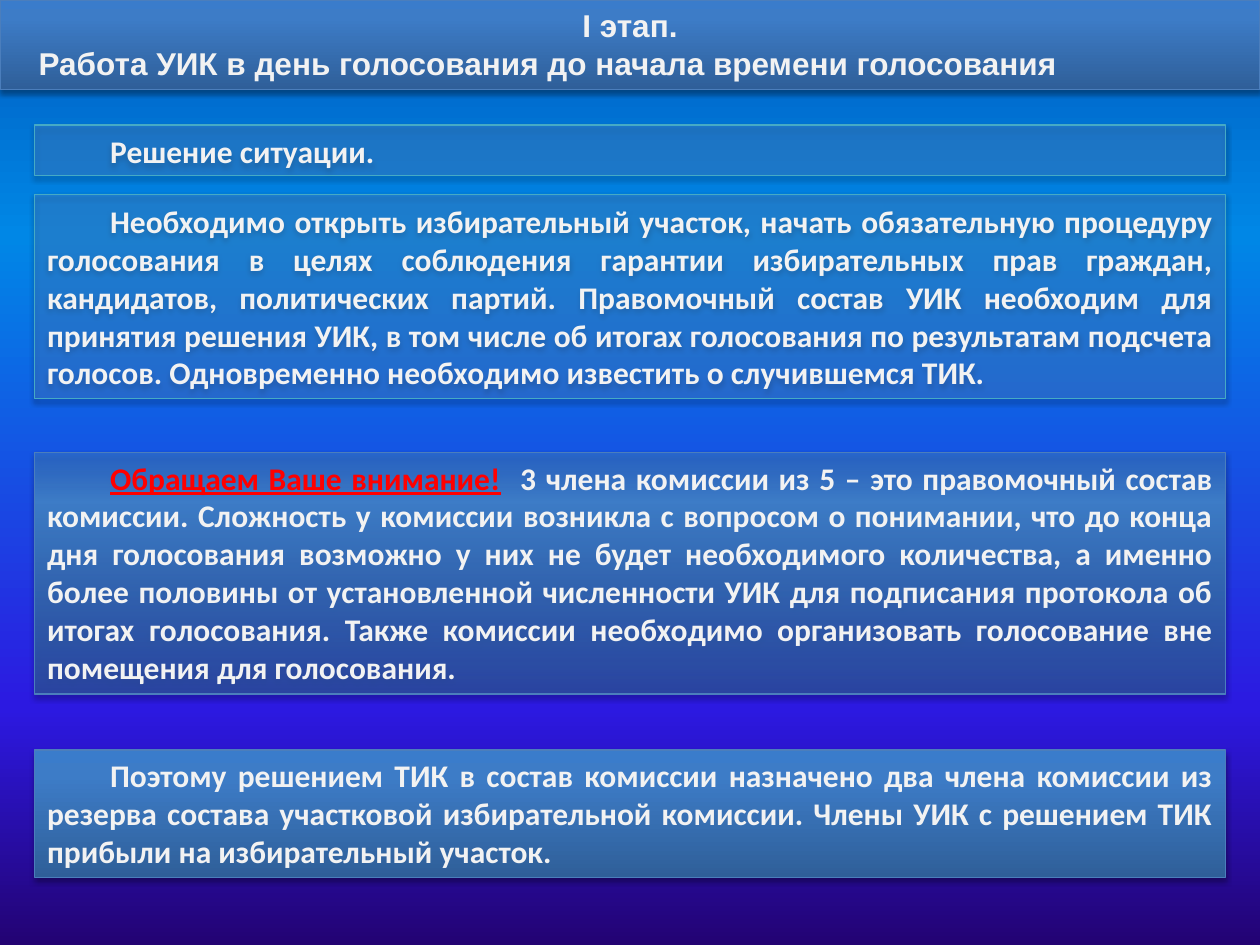
from lxml.etree import SubElement
from pptx import Presentation
from pptx.dml.color import RGBColor
from pptx.enum.shapes import MSO_SHAPE as Preset
from pptx.enum.text import MSO_ANCHOR as Anchor, MSO_AUTO_SIZE as AutoSize, PP_ALIGN as Align
from pptx.oxml.ns import qn
from pptx.util import Pt

WHITE = RGBColor(0xF2, 0xF2, 0xF2)
RED = RGBColor(0xFF, 0x00, 0x00)
STEEL = RGBColor(0x4B, 0x7E, 0xBC)
TEAL = RGBColor(0x46, 0xAA, 0xC5)
BLACK = RGBColor(0x00, 0x00, 0x00)
GLASS = RGBColor(0x55, 0x8E, 0xD5)
NAVY = RGBColor(0x2F, 0x5F, 0x99)
BLUE = RGBColor(0x3D, 0x7C, 0xC7)
SKY = RGBColor(0x3A, 0x7C, 0xCB)

BACKDROP = [(0, RGBColor(0x23, 0x03, 0x73), 100), (25, RGBColor(0x2C, 0x19, 0xE1), 100),
            (75, RGBColor(0x00, 0x87, 0xE6), 100), (100, RGBColor(0x00, 0x5C, 0xBF), 100)]
SOLID_BLUE = [(0, NAVY, 100), (80, BLUE, 100), (100, SKY, 100)]
CLEAR_BLUE = [(0, NAVY, 62), (80, BLUE, 100), (100, SKY, 52)]
CLEAR_GLASS = [(0, GLASS, 33), (100, GLASS, 33)]

HEADING = [
    ("I\u00a0этап.", Align.CENTER, 0),
    ("Работа УИК в день голосования до начала времени голосования", Align.LEFT, 15),
]
PANELS = [
    (71.5, 29, CLEAR_GLASS, TEAL, Anchor.MIDDLE, [("Решение ситуации.", WHITE, False)]),
    (111.3, 116.6, CLEAR_GLASS, TEAL, Anchor.MIDDLE, [(
        "Необходимо открыть избирательный участок, начать обязательную процедуру голосования "
        "в целях соблюдения гарантии избирательных прав граждан, кандидатов, политических партий. "
        "Правомочный состав УИК необходим для принятия решения УИК, в том числе об итогах "
        "голосования по результатам подсчета голосов. Одновременно необходимо известить "
        "о случившемся ТИК.", WHITE, False)]),
    (258.5, 138.2, CLEAR_BLUE, STEEL, Anchor.TOP, [
        ("Обращаем Ваше внимание!", RED, True),
        ("  3 члена комиссии из 5 – это правомочный состав комиссии. Сложность у комиссии возникла "
         "с вопросом о понимании, что до конца дня голосования возможно у них не будет необходимого "
         "количества, а именно более половины от установленной численности УИК для подписания "
         "протокола об итогах голосования. Также комиссии необходимо организовать голосование "
         "вне помещения для голосования.", WHITE, False)]),
    (428.6, 72.7, SOLID_BLUE, STEEL, Anchor.TOP, [(
        "Поэтому решением ТИК в состав комиссии назначено два члена комиссии из резерва состава "
        "участковой избирательной комиссии. Члены УИК с решением ТИК прибыли на избирательный "
        "участок.", WHITE, False)]),
]
SLIDE_WIDTH, SLIDE_HEIGHT = 720, 540
PANEL_LEFT, PANEL_WIDTH = 19.8, 680.4
FIRST_LINE = 36


def add_color(parent, color, opacity):
    tint = SubElement(parent, qn("a:srgbClr"), val=str(color))
    if opacity < 100:
        SubElement(tint, qn("a:alpha"), val=str(opacity * 1000))


def paint_upward(fill, holder, stops):
    fill.gradient()
    gradient = holder.find(qn("a:gradFill"))
    for part in list(gradient):
        gradient.remove(part)
    stop_list = SubElement(gradient, qn("a:gsLst"))
    for position, color, opacity in stops:
        add_color(SubElement(stop_list, qn("a:gs"), pos=str(position * 1000)), color, opacity)
    SubElement(gradient, qn("a:lin"), ang=str(270 * 60000), scaled="0")


def add_band(slide, left, top, width, height, stops, outline, anchor):
    band = slide.shapes.add_shape(Preset.RECTANGLE, Pt(left), Pt(top), Pt(width), Pt(height))
    properties = band.element.spPr
    paint_upward(band.fill, properties, stops)
    band.line.color.rgb = outline
    band.line.width = Pt(0.75)
    band.shadow.inherit = False
    shadow = SubElement(properties.find(qn("a:effectLst")), qn("a:outerShdw"), blurRad=str(Pt(3.1)),
                        dist=str(Pt(1.8)), dir=str(90 * 60000), rotWithShape="0")
    add_color(shadow, BLACK, 35)
    frame = band.text_frame
    layout = {"word_wrap": True, "auto_size": AutoSize.SHAPE_TO_FIT_TEXT, "vertical_anchor": anchor}
    for name, value in layout.items():
        setattr(frame, name, value)
    return frame


def write(paragraph, words, font_name, color, underline=False):
    run = paragraph.add_run()
    run.text = words
    look = {"name": font_name, "size": Pt(18), "bold": True, "underline": underline}
    for name, value in look.items():
        setattr(run.font, name, value)
    run.font.color.rgb = color


def set_indent(paragraph, indent):
    properties = paragraph._p.get_or_add_pPr()
    properties.set("marL", "0")
    properties.set("indent", str(Pt(indent)))


def main():
    deck = Presentation()
    deck.slide_width, deck.slide_height = Pt(SLIDE_WIDTH), Pt(SLIDE_HEIGHT)
    slide = deck.slides.add_slide(deck.slide_layouts[6])
    backdrop = slide.background.fill
    backdrop.solid()
    paint_upward(backdrop, slide.element.find(".//" + qn("p:bgPr")), BACKDROP)

    heading = add_band(slide, 0, 0, SLIDE_WIDTH, 51, SOLID_BLUE, STEEL, Anchor.TOP)
    for index, (words, alignment, indent) in enumerate(HEADING):
        paragraph = heading.add_paragraph() if index else heading.paragraphs[0]
        paragraph.alignment = alignment
        set_indent(paragraph, indent)
        write(paragraph, words, "Arial", WHITE)

    for top, height, stops, outline, anchor, runs in PANELS:
        panel = add_band(slide, PANEL_LEFT, top, PANEL_WIDTH, height, stops, outline, anchor)
        paragraph = panel.paragraphs[0]
        paragraph.alignment = Align.JUSTIFY
        set_indent(paragraph, FIRST_LINE)
        for words, color, underline in runs:
            write(paragraph, words, "Calibri", color, underline)

    deck.save("out.pptx")


if __name__ == "__main__":
    main()
